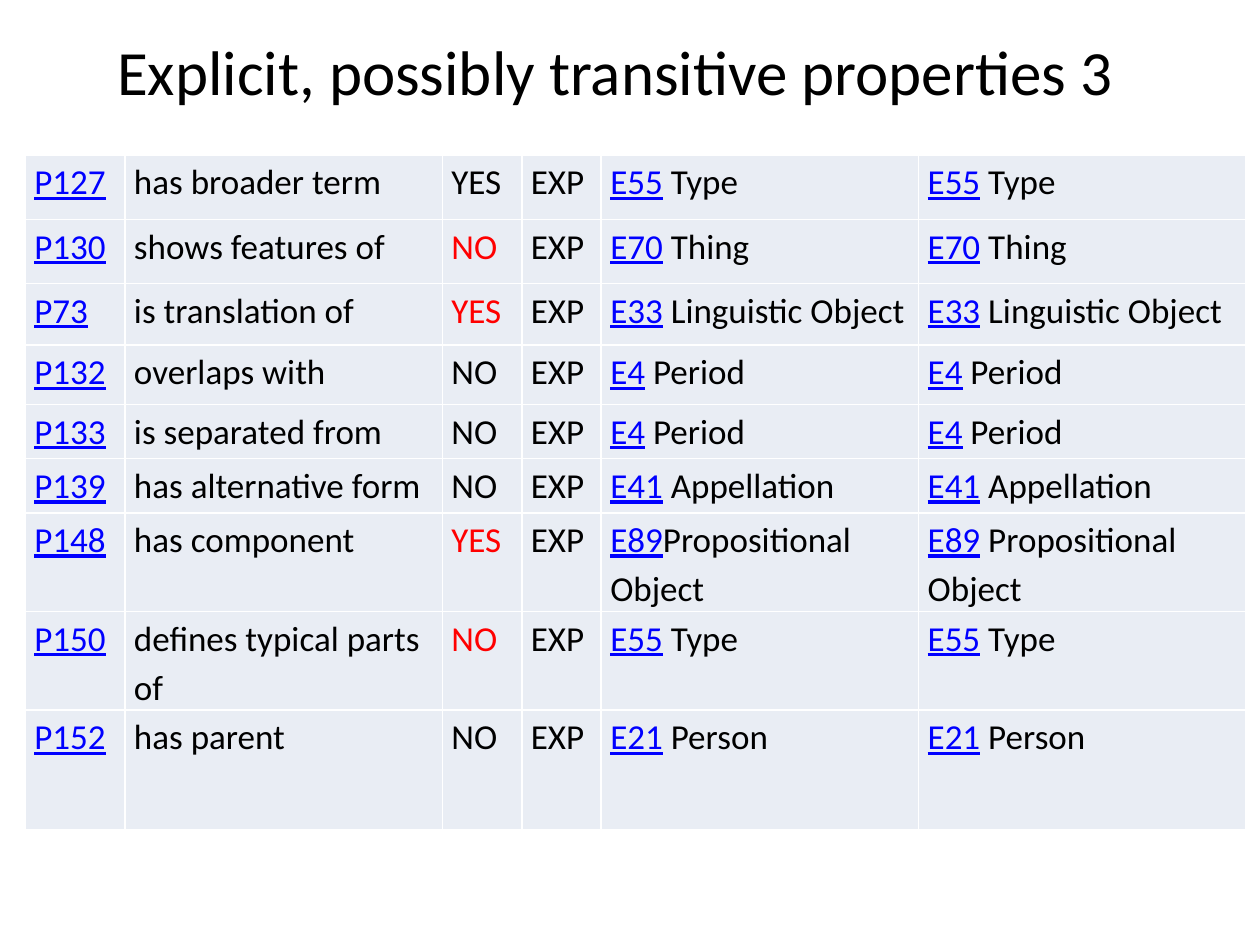
"""Build a slide with a table of possibly transitive properties."""
from lxml import etree
from pptx import Presentation
from pptx.dml.color import RGBColor
from pptx.enum.text import MSO_AUTO_SIZE, PP_ALIGN
from pptx.oxml.ns import qn
from pptx.util import Pt

LEFT = PP_ALIGN.LEFT
JUSTIFY = PP_ALIGN.JUSTIFY
FIT_SHAPE = MSO_AUTO_SIZE.SHAPE_TO_FIT_TEXT
BLACK, BLUE, RED, WHITE, PALE = "000000", "0000FF", "FF0000", "FFFFFF", "E9EDF4"


def add_run(paragraph, text, size, color=BLACK, underline=False):
    run = paragraph.add_run()
    run.text = text
    run.font.name = "Calibri"
    run.font.size = Pt(size)
    run.font.underline = underline
    run.font.color.rgb = RGBColor.from_string(color)


def add_white_borders(cell):
    properties = cell._tc.get_or_add_tcPr()
    for index, side in enumerate(("lnL", "lnR", "lnT", "lnB")):
        line = etree.Element(qn(f"a:{side}"), w=str(Pt(1)))
        fill = etree.SubElement(line, qn("a:solidFill"))
        etree.SubElement(fill, qn("a:srgbClr"), val=WHITE)
        properties.insert(index, line)


presentation = Presentation()
presentation.slide_width = Pt(720)
presentation.slide_height = Pt(540)
slide = presentation.slides.add_slide(presentation.slide_layouts[6])

properties = [
    ("P127", "has broader term", "YES", BLACK, "E55", " Type"),
    ("P130", "shows features of", "NO", RED, "E70", " Thing"),
    ("P73", "is translation of", "YES", RED, "E33", " Linguistic Object"),
    ("P132", "overlaps with", "NO", BLACK, "E4", " Period"),
    ("P133", "is separated from", "NO", BLACK, "E4", " Period"),
    ("P139", "has alternative form", "NO", BLACK, "E41", " Appellation"),
    ("P148", "has component", "YES", RED, "E89", " Propositional Object"),
    ("P150", "defines typical parts of", "NO", RED, "E55", " Type"),
    ("P152", "has parent", "NO", BLACK, "E21", " Person"),
]
column_widths = [57, 181.4, 45.4, 45.4, 181.4, 187.2]
row_heights = [36.7, 36.7, 35.3, 33.8, 31, 31, 50.4, 36.7, 68.4]

table = slide.shapes.add_table(
    len(row_heights), len(column_widths), Pt(14.4), Pt(88.6),
    Pt(sum(column_widths)), Pt(sum(row_heights))).table
table.first_row = False
table.horz_banding = False
for column, width in zip(table.columns, column_widths):
    column.width = Pt(width)
for row, height in zip(table.rows, row_heights):
    row.height = Pt(height)

for row_index, (code, name, answer, answer_color, entity, label) in enumerate(properties):
    domain_label = label.strip() if code == "P148" else label
    contents = [
        [(code, BLUE, True)],
        [(name, BLACK, False)],
        [(answer, answer_color, False)],
        [("EXP", BLACK, False)],
        [(entity, BLUE, True), (domain_label, BLACK, False)],
        [(entity, BLUE, True), (label, BLACK, False)],
    ]
    justified_columns = (1,) if row_index < 5 else (2, 3, 4) if row_index > 5 else ()
    for column_index, runs in enumerate(contents):
        cell = table.cell(row_index, column_index)
        cell.margin_left = cell.margin_right = Pt(5.2)
        cell.margin_top = cell.margin_bottom = Pt(0)
        cell.fill.solid()
        cell.fill.fore_color.rgb = RGBColor.from_string(PALE)
        add_white_borders(cell)
        paragraph = cell.text_frame.paragraphs[0]
        paragraph.line_spacing = 1.15
        paragraph.alignment = JUSTIFY if column_index in justified_columns else LEFT
        for text, color, underline in runs:
            add_run(paragraph, text, 20, color, underline)

title = slide.shapes.add_textbox(Pt(59.8), Pt(15.1), Pt(589), Pt(51.1))
title.text_frame.word_wrap = False
title.text_frame.auto_size = FIT_SHAPE
add_run(title.text_frame.paragraphs[0], "Explicit, possibly transitive properties 3", 36)

presentation.save("out.pptx")
